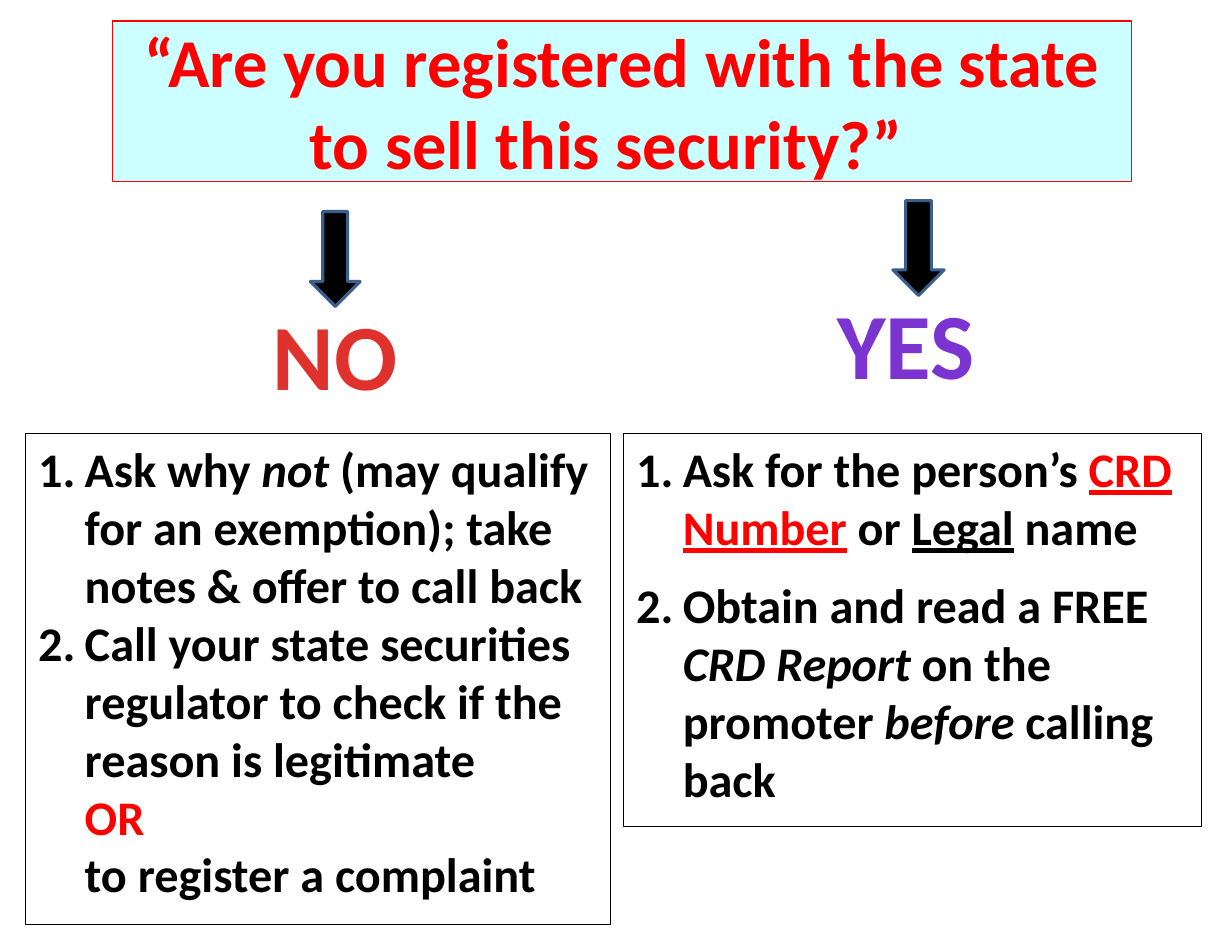
from dataclasses import dataclass

from lxml import etree
from pptx import Presentation
from pptx.dml.color import RGBColor
from pptx.enum.shapes import MSO_SHAPE
from pptx.enum.text import MSO_ANCHOR, MSO_AUTO_SIZE, PP_ALIGN
from pptx.oxml.ns import qn
from pptx.util import Pt

CENTER, LEFT = PP_ALIGN.CENTER, PP_ALIGN.LEFT
TOP, MIDDLE = MSO_ANCHOR.TOP, MSO_ANCHOR.MIDDLE
NO_AUTOFIT = MSO_AUTO_SIZE.NONE
DOWN_ARROW = MSO_SHAPE.DOWN_ARROW
TWO_CONTENT = 3


@dataclass(frozen=True)
class Theme:
    font: str = "Calibri"
    title_size: float = 44
    answer_size: float = 60
    body_size: float = 31
    ink: RGBColor = RGBColor(0, 0, 0)
    accent: RGBColor = RGBColor(0xFF, 0, 0)
    banner: RGBColor = RGBColor(0xCC, 0xFF, 0xFF)
    arrow_line: RGBColor = RGBColor(0x3A, 0x5F, 0x8C)
    no: RGBColor = RGBColor(0xE0, 0x32, 0x2D)
    yes: RGBColor = RGBColor(0x7B, 0x34, 0xD2)


THEME = Theme()

# Run styles
PLAIN = {}
ITALIC = {"italic": True}
UNDERLINED = {"underline": True}
RED = {"color": THEME.accent}
RED_UNDERLINED = {**RED, **UNDERLINED}

# Each list is a sequence of items; each item is a sequence of (text, style)
NO_STEPS = [
    [("Ask why ", PLAIN), ("not", ITALIC),
     (" (may qualify for an exemption); take notes & offer to call back", PLAIN)],
    [("Call your state securities regulator to check if the reason is legitimate", PLAIN),
     ("\n", PLAIN), ("OR", RED), ("\n", PLAIN), ("to register a complaint", PLAIN)],
]
YES_STEPS = [
    [("Ask for the person’s ", PLAIN), ("CRD Number", RED_UNDERLINED), (" or ", PLAIN),
     ("Legal", UNDERLINED), (" name", PLAIN)],
    [("Obtain and read a FREE ", PLAIN), ("CRD Report ", ITALIC), ("on the promoter", PLAIN),
     (" before", ITALIC), (" calling back", PLAIN)],
]


def place(shape, box):
    shape.left, shape.top, shape.width, shape.height = (Pt(length) for length in box)


def prepare_frame(shape, anchor, wrap=True):
    frame = shape.text_frame
    frame.auto_size = NO_AUTOFIT
    frame.word_wrap = wrap
    frame.vertical_anchor = anchor
    frame.margin_left = frame.margin_right = Pt(8)
    frame.margin_top = frame.margin_bottom = Pt(4)
    return frame


def add_run(paragraph, text, size, color=THEME.ink, italic=False, underline=False):
    run = paragraph.add_run()
    run.text = text
    font = run.font
    font.name, font.size, font.bold = THEME.font, Pt(size), True
    font.italic, font.underline = italic, underline
    font.color.rgb = color


def outline(shape, color, width):
    shape.line.color.rgb = color
    shape.line.width = Pt(width)


def add_question(title, box):
    """Banner with the question on two centred lines."""
    place(title, box)
    title.fill.solid()
    title.fill.fore_color.rgb = THEME.banner
    outline(title, THEME.accent, 0.75)
    frame = prepare_frame(title, MIDDLE)
    first, second = frame.paragraphs[0], frame.add_paragraph()
    for paragraph, text in ((first, "“Are you registered with the state"),
                            (second, "to sell this security?”")):
        paragraph.alignment = CENTER
        add_run(paragraph, text, THEME.title_size, THEME.accent)
    # The second line sits slightly left of centre
    second._p.get_or_add_pPr().set("marR", str(Pt(20)))


def add_answer(slide, box, text, color, arrow_width, arrow_shift):
    """Arrow above a large answer word."""
    left, top, width, height = box
    arrow_height = 61

    arrow = slide.shapes.add_shape(DOWN_ARROW, 0, 0, 0, 0)
    place(arrow, (left + (width - arrow_width) / 2 + arrow_shift, top,
                  arrow_width, arrow_height))
    arrow.shadow.inherit = False
    arrow.fill.solid()
    arrow.fill.fore_color.rgb = THEME.ink
    outline(arrow, THEME.arrow_line, 2)

    label = slide.shapes.add_textbox(0, 0, 0, 0)
    label_top = arrow_height - 10
    place(label, (left, top + label_top, width, height - label_top))
    paragraph = prepare_frame(label, TOP, wrap=False).paragraphs[0]
    paragraph.alignment = CENTER
    add_run(paragraph, text, THEME.answer_size, color)


def number_paragraph(paragraph, indent):
    properties = paragraph._p.get_or_add_pPr()
    properties.set("marL", str(Pt(indent)))
    properties.set("indent", str(-Pt(indent)))
    etree.SubElement(properties, qn("a:buFont"), typeface="+mj-lt")
    etree.SubElement(properties, qn("a:buAutoNum"), type="arabicPeriod")


def add_steps(body, box, steps, gap):
    """Outlined box with a numbered list."""
    place(body, box)
    outline(body, THEME.ink, 0.75)
    frame = prepare_frame(body, TOP)
    for index, step in enumerate(steps):
        paragraph = frame.add_paragraph() if index else frame.paragraphs[0]
        paragraph.alignment = LEFT
        paragraph.space_before = Pt(gap if index else 0)
        number_paragraph(paragraph, 30)
        for text, style in step:
            if text == "\n":
                paragraph.add_line_break()
            else:
                add_run(paragraph, text, THEME.body_size, **style)


def main():
    presentation = Presentation()
    presentation.slide_width, presentation.slide_height = Pt(792), Pt(612)
    slide = presentation.slides.add_slide(presentation.slide_layouts[TWO_CONTENT])
    title, no_body, yes_body = slide.placeholders

    add_question(title, (72.5, 13.5, 655, 103))

    # Lists share one top edge
    steps_top = 278.5
    add_steps(no_body, (16.5, steps_top, 376, 316), NO_STEPS, gap=0)
    add_steps(yes_body, (401, steps_top, 371.5, 253), YES_STEPS, gap=13)

    add_answer(slide, (166.5, 136, 98, 132), "NO", THEME.no, 32, arrow_shift=0)
    add_answer(slide, (530, 129, 105, 138), "YES", THEME.yes, 33, arrow_shift=8)

    presentation.save("out.pptx")


if __name__ == "__main__":
    main()
